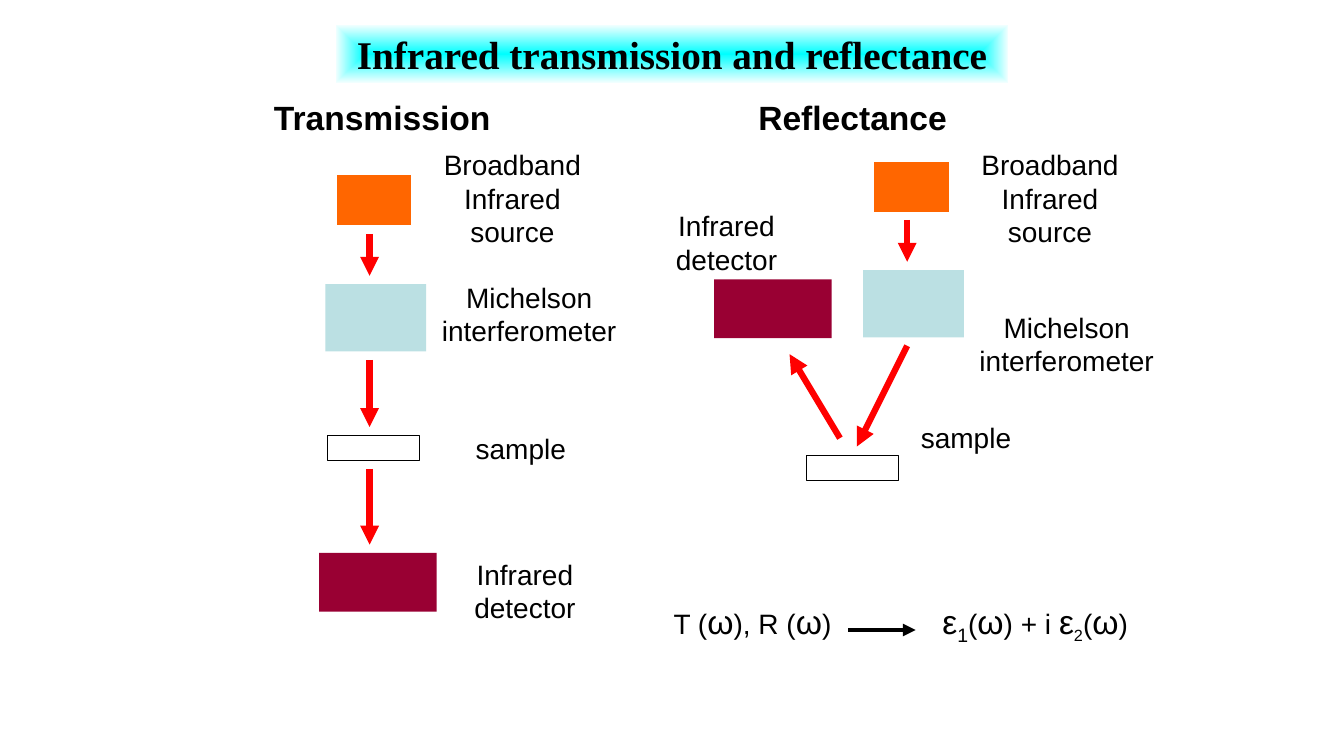
from lxml.etree import SubElement
from pptx import Presentation
from pptx.dml.color import RGBColor
from pptx.enum.shapes import MSO_CONNECTOR, MSO_SHAPE
from pptx.enum.text import PP_ALIGN
from pptx.oxml import parse_xml
from pptx.oxml.ns import nsdecls, qn
from pptx.util import Pt

TITLE = "Infrared transmission and reflectance"
HEADS = [("Transmission", 186), ("Reflectance", 522)]

PARTS = {
    "source": (54, 36, "FF6600", "FFFFFF"),
    "mixer": (72, 48, "BBE0E3", None),
    "sample": (66, 18, "FFFFFF", "000000"),
    "sensor": (84, 42, "990033", None),
}
LABELS = {
    "source": ("Broadband Infrared source", 120, 80),
    "mixer": ("Michelson interferometer", 144, 55.5),
    "sample": ("sample", 84, 31),
    "sensor": ("Infrared detector", 102, 55.5),
}
SETUPS = [
    [
        ("source", (240, 125), (306, 102)),
        ("mixer", (232.5, 203), (306, 196.5)),
        ("sample", (234, 311), (330, 304.5)),
        ("sensor", (228, 395), (324, 394.5)),
    ],
    [
        ("source", (624, 115.5), (690, 102)),
        ("mixer", (616.5, 193), (690, 218)),
        ("sample", (576, 325.5), (648, 296.5)),
        ("sensor", (510, 199.5), (468, 145.5)),
    ],
]
BEAMS = [
    (264, 167, 264, 197),
    (264, 257, 264, 305),
    (264, 335, 264, 389),
    (648, 157, 648, 187),
    (648, 247, 612, 319),
    (600, 313, 564, 253),
]
RATIOS = [("T (", 20), ("ω", 24), ("), R (", 20), ("ω", 24), (")", 20)]
EPSILON = [
    ("ε", 24), ("1", 24, True), ("(", 20), ("ω", 24), (") + i ", 20),
    ("ε", 24), ("2", 20, True), ("(", 20), ("ω", 24), (")", 20),
]


def color(code):
    """Turn a hex string into a colour."""
    return RGBColor.from_string(code)


def write(shape, runs, align=PP_ALIGN.CENTER, bold=False, face="Arial"):
    """Fill a shape with one paragraph of (text, size, subscript) runs."""
    shape.text_frame.word_wrap = True
    para = shape.text_frame.paragraphs[0]
    para.alignment = align
    for text, size, *sub in runs:
        run = para.add_run()
        run.text = text
        font = run.font
        font.name, font.size, font.bold = face, Pt(size), bold
        font.color.rgb = color("000000")
        if sub:
            run._r.get_or_add_rPr().set("baseline", "-25000")


def label(parent, box, runs, **style):
    """Add a text box."""
    write(parent.add_textbox(*map(Pt, box)), runs, **style)


def block(parent, box, fill=None, edge=None):
    """Add a flat rectangle."""
    shape = parent.add_shape(MSO_SHAPE.RECTANGLE, *map(Pt, box))
    shape.shadow.inherit = False
    if fill:
        shape.fill.solid()
        shape.fill.fore_color.rgb = color(fill)
    if edge:
        shape.line.color.rgb = color(edge)
        shape.line.width = Pt(0.75)
    else:
        shape.line.fill.background()
    return shape


def arrow(parent, ends, tint, width):
    """Add a line with a triangle at its end."""
    line = parent.add_connector(MSO_CONNECTOR.STRAIGHT, *map(Pt, ends))
    line.line.color.rgb = color(tint)
    line.line.width = Pt(width)
    SubElement(line.line._get_or_add_ln(), qn("a:tailEnd"), type="triangle")
    SubElement(line._element.spPr, qn("a:effectLst"))


def glow(shape, inner, outer):
    """Shade a shape from its centre to its edges."""
    shape.fill.gradient()
    for stop, tint in zip(shape.fill.gradient_stops, (inner, outer)):
        stop.color.rgb = color(tint)
    grad = shape._element.spPr.find(qn("a:gradFill"))
    grad.replace(grad.find(qn("a:lin")), parse_xml(
        f'<a:path {nsdecls("a")} path="shape"><a:fillToRect '
        'l="50000" t="50000" r="50000" b="50000"/></a:path>'))


def main():
    """Build the slide."""
    deck = Presentation()
    deck.slide_width, deck.slide_height = Pt(960), Pt(540)
    shapes = deck.slides.add_slide(deck.slide_layouts[6]).shapes

    banner = block(shapes, (240, 18, 480, 41))
    glow(banner, "00FFFF", "F1FFFF")
    write(banner, [(TITLE, 28)], bold=True, face="Times New Roman")
    for text, left in HEADS:
        label(shapes, (left, 66, 174, 36), [(text, 24)], bold=True)

    for setup in SETUPS:
        for kind, spot, place in setup:
            wide, high, fill, edge = PARTS[kind]
            block(shapes, (*spot, wide, high), fill, edge)
            text, wide, high = LABELS[kind]
            label(shapes, (*place, wide, high), [(text, 20)])
    for ends in BEAMS:
        arrow(shapes, ends, "FF0000", 4.5)

    group = shapes.add_group_shape().shapes
    label(group, (666, 425.5, 156, 36.5), EPSILON, align=PP_ALIGN.LEFT)
    label(group, (474, 426, 132, 36), RATIOS, align=PP_ALIGN.LEFT)
    arrow(group, (606, 450, 654, 450), "000000", 3)
    deck.save("out.pptx")


if __name__ == "__main__":
    main()
